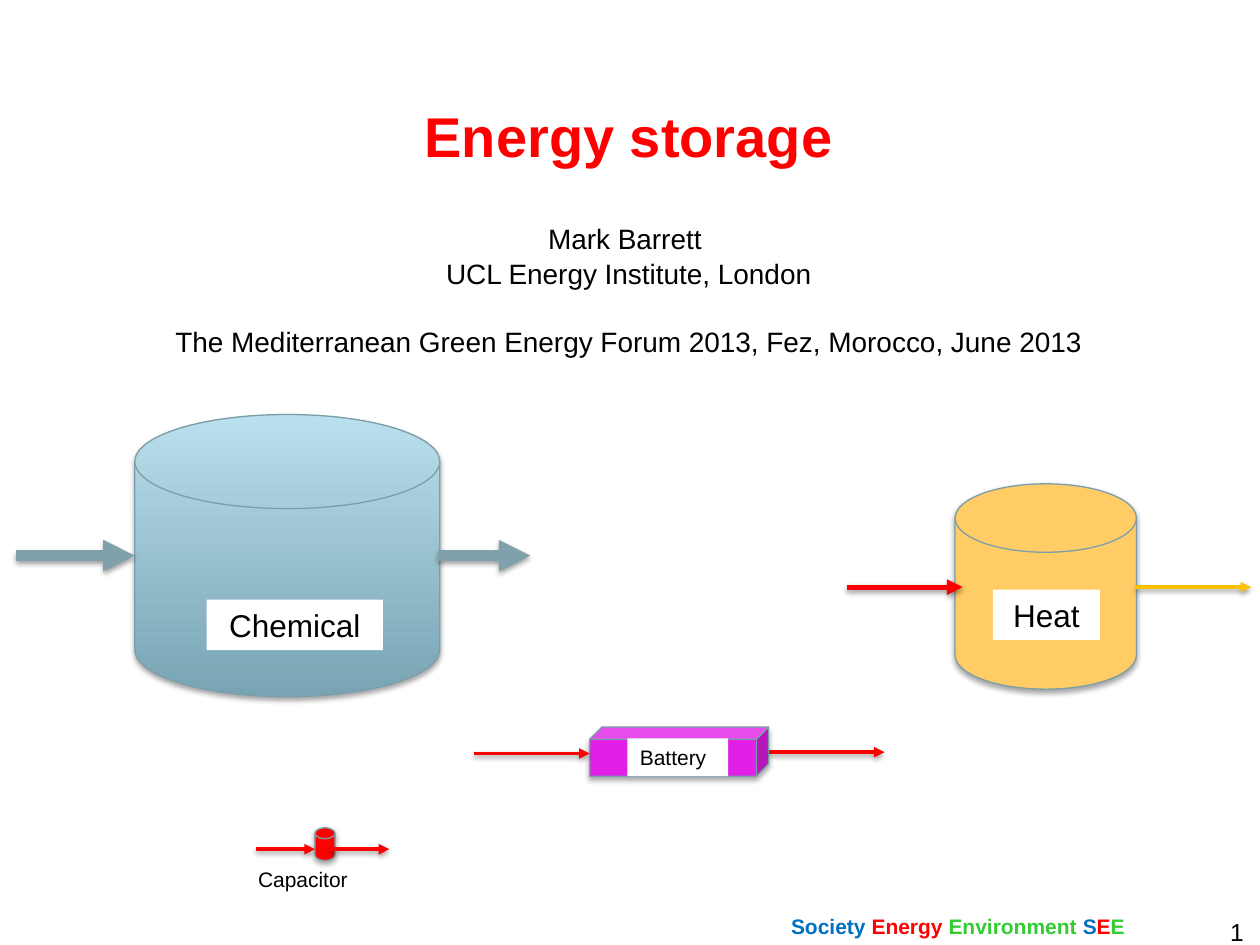
from lxml import etree
from pptx import Presentation
from pptx import util as u
from pptx.dml.color import RGBColor
from pptx.enum import shapes, text
from pptx.oxml import ns

BLACK = RGBColor(0x00, 0x00, 0x00)
WHITE = RGBColor(0xFF, 0xFF, 0xFF)
RED = RGBColor(0xFF, 0x00, 0x00)
BLUE = RGBColor(0x00, 0x70, 0xC0)
GREEN = RGBColor(0x33, 0xCC, 0x33)
AMBER = RGBColor(0xFF, 0xC0, 0x00)
SAND = RGBColor(0xFF, 0xCC, 0x66)
MAGENTA = RGBColor(0xE1, 0x1F, 0xE6)
STEEL = RGBColor(0x7F, 0xA1, 0xAC)
OUTLINE = RGBColor(0x7B, 0x9E, 0xA9)
DEEP_TEAL = RGBColor(0x78, 0xA4, 0xB3)
PALE_TEAL = RGBColor(0xBA, 0xDF, 0xED)


def add_shadow(item, distance, opacity):
    effects = etree.SubElement(item.element.spPr, ns.qn("a:effectLst"))
    shadow = etree.SubElement(
        effects, ns.qn("a:outerShdw"), blurRad=str(u.Pt(3.1)),
        dist=str(u.Pt(distance)), dir="5400000", algn="ctr", rotWithShape="0")
    color = etree.SubElement(shadow, ns.qn("a:srgbClr"), val=str(BLACK))
    etree.SubElement(color, ns.qn("a:alpha"), val=str(opacity * 1000))


def add_text(place, lines, size, color=BLACK, align=text.PP_ALIGN.LEFT, fill=None):
    box = page.shapes.add_textbox(*map(u.Inches, place))
    box.text_frame.word_wrap = True
    if fill is not None:
        box.fill.solid()
        box.fill.fore_color.rgb = fill
    for index, line in enumerate(lines):
        para = box.text_frame.paragraphs[0] if index == 0 else box.text_frame.add_paragraph()
        para.text = line
        para.alignment = align
        para.font.name = "Arial"
        para.font.size = u.Pt(size)
        para.font.color.rgb = color
    return box


deck = Presentation()
deck.slide_width = u.Inches(10)
deck.slide_height = u.Inches(7.5)
page = deck.slides.add_slide(deck.slide_layouts[6])

footer = add_text((6.18, 7.19, 2.96, 0.31), [""], 12)
para = footer.text_frame.paragraphs[0]
para.line_spacing = 1.05
para.font.bold = True
for words, color in [("Society ", BLUE), ("Energy", RED), (" Environment ", GREEN),
                     ("S", BLUE), ("E", RED), ("E", GREEN)]:
    span = para.add_run()
    span.text = words
    span.font.color.rgb = color

add_text((9.17, 7.23, 0.8, 0.3), ["1"], 14, align=text.PP_ALIGN.RIGHT)

title = add_text(
    (0.35, 0.76, 9.28, 2.36),
    ["Energy storage", "Mark Barrett ", "UCL Energy Institute, London",
     "The Mediterranean Green Energy Forum 2013, Fez, Morocco, June 2013"],
    16, align=text.PP_ALIGN.CENTER, fill=WHITE)
frame = title.text_frame
frame.margin_left = frame.margin_right = frame.margin_bottom = 0
frame.margin_top = u.Inches(0.02)
for para, gap in zip(frame.paragraphs, (0, 29, 0, 19)):
    para.line_spacing = 1.05
    para.space_before = u.Pt(gap)
heading = frame.paragraphs[0].font
heading.size = u.Pt(32)
heading.bold = True
heading.color.rgb = RED

DISK = shapes.MSO_SHAPE.FLOWCHART_MAGNETIC_DISK
stores = [
    (DISK, (1.07, 3.29, 2.42, 2.24), None),
    (DISK, (2.5, 6.57, 0.16, 0.26), RED),
    (shapes.MSO_SHAPE.CUBE, (4.68, 5.77, 1.42, 0.39), MAGENTA),
    (DISK, (7.58, 3.84, 1.44, 1.63), SAND),
]
for kind, place, color in stores:
    store = page.shapes.add_shape(kind, *map(u.Inches, place))
    if color is None:
        store.fill.gradient()
        store.fill.gradient_angle = 90
        for stop, shade, position in zip(store.fill.gradient_stops, (DEEP_TEAL, PALE_TEAL), (0, 1)):
            stop.color.rgb = shade
            stop.position = position
    else:
        store.fill.solid()
        store.fill.fore_color.rgb = color
    store.line.color.rgb = OUTLINE
    store.line.width = u.Pt(0.75)
    add_shadow(store, 1.8, 35)

flows = [
    (0.13, 1.07, 4.41, STEEL, 6), (3.48, 4.21, 4.41, STEEL, 6),
    (6.72, 7.64, 4.66, RED, 3), (9.01, 9.93, 4.66, AMBER, 2),
    (2.03, 2.5, 6.74, RED, 2), (2.62, 3.09, 6.74, RED, 2),
    (3.76, 4.68, 5.98, RED, 2), (6.1, 7.02, 5.97, RED, 2),
]
for start, end, height, color, width in flows:
    flow = page.shapes.add_connector(
        shapes.MSO_CONNECTOR.STRAIGHT,
        u.Inches(start), u.Inches(height), u.Inches(end), u.Inches(height))
    flow.line.color.rgb = color
    flow.line.width = u.Pt(width)
    etree.SubElement(flow.element.spPr.find(ns.qn("a:ln")), ns.qn("a:tailEnd"), type="triangle")
    add_shadow(flow, 1.6, 38)

add_text((1.95, 6.83, 1.34, 0.3), ["Capacitor"], 12)
add_text((7.88, 4.68, 0.85, 0.4), ["Heat"], 18, align=text.PP_ALIGN.CENTER, fill=WHITE)
add_text((4.98, 5.86, 0.8, 0.3), ["Battery"], 12, fill=WHITE)
add_text((1.64, 4.76, 1.4, 0.4), ["Chemical"], 18, align=text.PP_ALIGN.CENTER, fill=WHITE)

deck.save("out.pptx")
